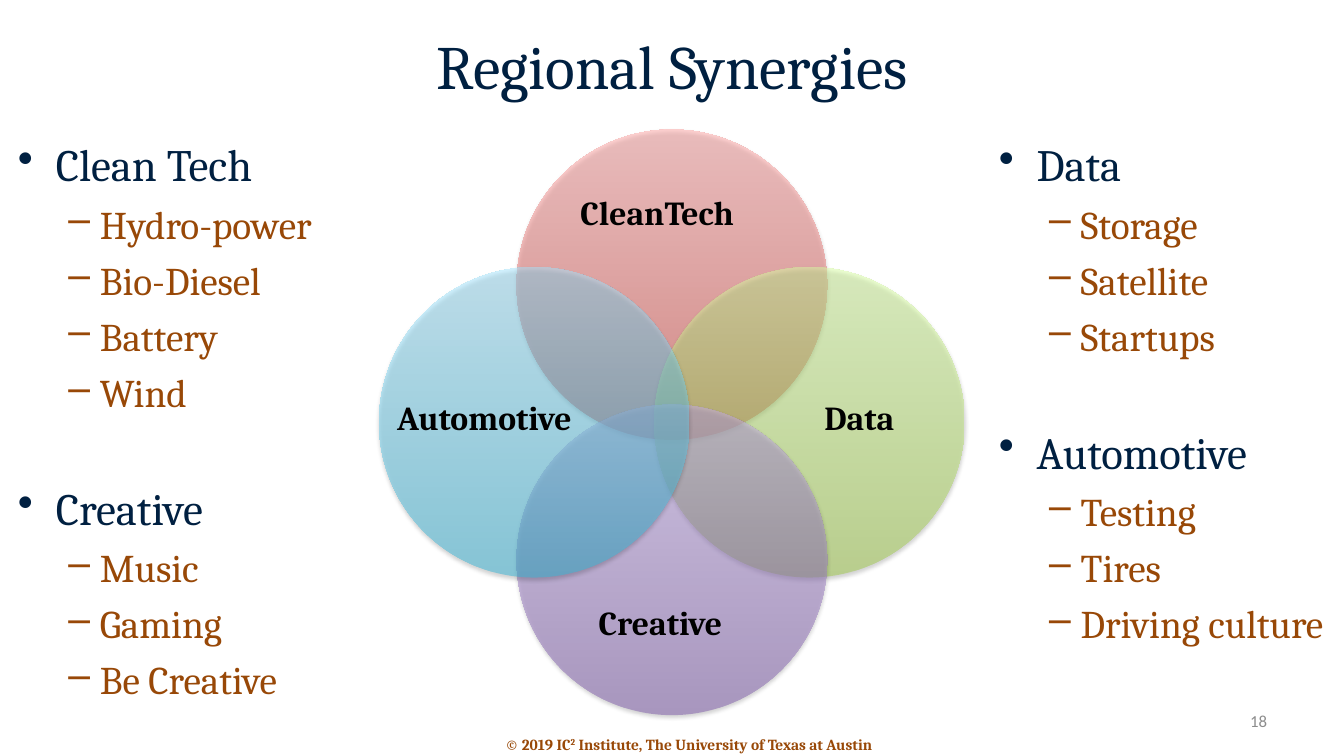
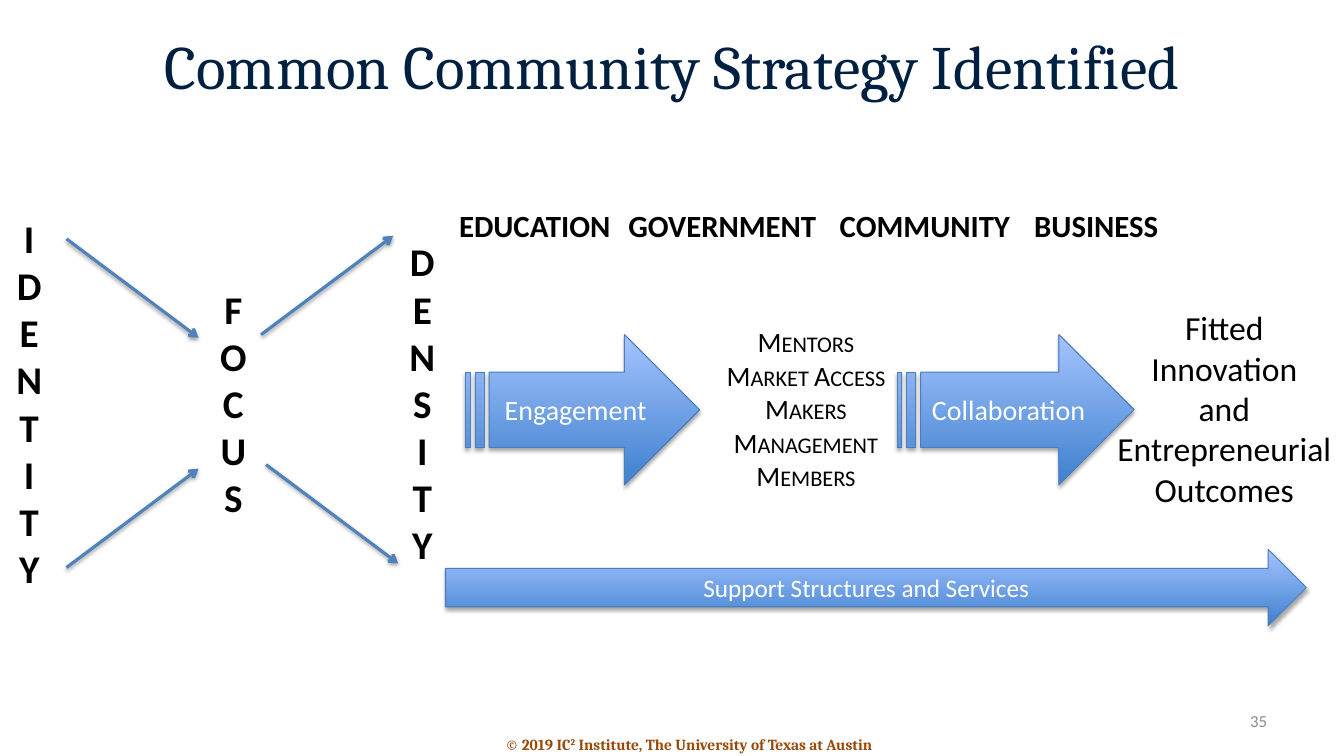
from dataclasses import dataclass
from typing import NamedTuple, Optional

from lxml import etree
from pptx import Presentation
from pptx.dml.color import RGBColor
from pptx.enum.shapes import MSO_CONNECTOR, MSO_SHAPE
from pptx.enum.text import MSO_ANCHOR, MSO_AUTO_SIZE, PP_ALIGN
from pptx.oxml.ns import qn
from pptx.util import Emu, Inches, Pt

LEFT, CENTER, RIGHT = PP_ALIGN.LEFT, PP_ALIGN.CENTER, PP_ALIGN.RIGHT
TOP, MIDDLE = MSO_ANCHOR.TOP, MSO_ANCHOR.MIDDLE
GROW = MSO_AUTO_SIZE.SHAPE_TO_FIT_TEXT
STRAIGHT = MSO_CONNECTOR.STRAIGHT
ELLIPSE = MSO_SHAPE.OVAL
STRIPED_ARROW, RIGHT_ARROW = MSO_SHAPE.STRIPED_RIGHT_ARROW, MSO_SHAPE.RIGHT_ARROW

NAVY = RGBColor(0x00, 0x20, 0x41)
RUST = RGBColor(0x98, 0x48, 0x07)
GREY = RGBColor(0x8C, 0x8C, 0x8C)
BLACK = RGBColor(0x00, 0x00, 0x00)
WHITE = RGBColor(0xFF, 0xFF, 0xFF)
BLUE = RGBColor(0x4F, 0x81, 0xBD)
ARROW_EDGE = RGBColor(0x4B, 0x7E, 0xBC)
ARROW_DARK = RGBColor(0x3F, 0x80, 0xCE)
ARROW_LIGHT = RGBColor(0xA4, 0xC4, 0xFF)
RED_DARK, RED_LIGHT = RGBColor(0xD1, 0x40, 0x3C), RGBColor(0xFF, 0xA6, 0xA5)
GREEN_DARK, GREEN_LIGHT = RGBColor(0xA0, 0xCA, 0x4A), RGBColor(0xDA, 0xFF, 0xA5)
PURPLE_DARK, PURPLE_LIGHT = RGBColor(0x7F, 0x5B, 0xAB), RGBColor(0xC8, 0xB0, 0xED)
AQUA_DARK, AQUA_LIGHT = RGBColor(0x39, 0xB7, 0xD8), RGBColor(0xA7, 0xE6, 0xFF)

CELL = Inches(0.1)
COLUMNS, ROWS = 133.33, 75


class Box(NamedTuple):
    left: float
    top: float
    width: float
    height: float


@dataclass(frozen=True)
class TextStyle:
    size: float
    color: RGBColor = BLACK
    font: str = "Calibri"
    bold: bool = False
    align: PP_ALIGN = CENTER
    small_caps: bool = False


@dataclass(frozen=True)
class BulletStyle:
    character: str
    margin: float
    hanging: float
    level: int
    text: TextStyle


@dataclass(frozen=True)
class Topic:
    heading: str
    items: tuple[str, ...]


@dataclass(frozen=True)
class Circle:
    label: str
    across: int
    down: int
    dark: RGBColor
    light: RGBColor
    label_box: Box


@dataclass(frozen=True)
class BlockArrow:
    text: str
    kind: MSO_SHAPE
    box: Box
    size: float


@dataclass(frozen=True)
class TextBlock:
    text: str
    box: Box
    style: TextStyle
    wrap: bool = False


TITLE = TextStyle(44, NAVY, "Cambria")
FOOTER = TextStyle(11, RUST, "Cambria", bold=True)
NUMBER = TextStyle(12, GREY, align=RIGHT)
CIRCLE_LABEL = TextStyle(24, BLACK, "Cambria", bold=True, align=LEFT)
LETTERS = TextStyle(28, bold=True)
PILLAR = TextStyle(22, bold=True)
ROLES = TextStyle(20, small_caps=True)
OUTCOMES = TextStyle(24)
HEADING = BulletStyle("•", 3.75, 3.75, 0, TextStyle(32, NAVY, "Cambria", align=LEFT))
ITEM = BulletStyle("–", 8.13, 3.13, 1, TextStyle(28, RUST, "Cambria", align=LEFT))
ITEM_GAP, TOPIC_GAP = Pt(6.5), Pt(46.5)

TITLE_BOX = Box(6.7, 0.2, 120, 12.5)
FOOTER_BOX = Box(37.8, 72.4, 61.1, 2.9)
NUMBER_BOX = Box(95.6, 69.5, 31.1, 4)
FOOTER_PARTS = (("© 2019 IC", 0), ("2", 30000), (" Institute, The University of Texas at Austin", 0))

TOPIC_LISTS = (
    (Box(0.8, 13.1, 39.3, 58.6), (
        Topic("Clean Tech", ("Hydro-power", "Bio-Diesel", "Battery", "Wind")),
        Topic("Creative", ("Music", "Gaming", "Be Creative")))),
    (Box(98.1, 13.1, 35.8, 58.6), (
        Topic("Data", ("Storage", "Satellite", "Startups")),
        Topic("Automotive", ("Testing", "Tires", "Driving culture")))),
)
DIAMETER, SPREAD = 30.8, 13.65
VENN_LEFT, VENN_TOP = 51.25, 26.5
CIRCLES = (
    Circle("CleanTech", 0, -1, RED_DARK, RED_LIGHT, Box(56.6, 18.5, 20.1, 5)),
    Circle("Data", 1, 0, GREEN_DARK, GREEN_LIGHT, Box(80.8, 38.9, 10.2, 5)),
    Circle("Creative", 0, 1, PURPLE_DARK, PURPLE_LIGHT, Box(58.4, 59.2, 16.5, 5)),
    Circle("Automotive", -1, 0, AQUA_DARK, AQUA_LIGHT, Box(38.4, 38.9, 22.2, 5)),
)

TEXT_BLOCKS = (
    TextBlock("\n".join("IDENTITY"), Box(0.6, 20.8, 4.6, 38.7), LETTERS),
    TextBlock("\n".join("FOCUS"), Box(20.8, 27.8, 4.7, 24.6), LETTERS),
    TextBlock("\n".join("DENSITY"), Box(39.6, 23.1, 4.6, 34), LETTERS),
    TextBlock("Mentors\nMarket Access\nMakers\nManagement\nMembers", Box(70.9, 31.7, 18.1, 17.8), ROLES),
    TextBlock("Fitted\nInnovation\nand\nEntrepreneurial\nOutcomes", Box(109.7, 30, 23.5, 21.2), OUTCOMES),
    TextBlock("EDUCATION", Box(44.2, 20, 17.7, 4.7), PILLAR, True),
    TextBlock("GOVERNMENT", Box(60.7, 20, 21.9, 4.7), PILLAR, True),
    TextBlock("COMMUNITY", Box(81.5, 20, 20.5, 4.7), PILLAR, True),
    TextBlock("BUSINESS", Box(100.8, 20, 15.9, 4.7), PILLAR, True),
)
THIN_RUN, THIN_RISE = 13.1, 9.8
THIN_ARROWS = ((6.6, 23.7, 1), (6.6, 56.3, -1), (26.4, 46.1, 1), (25.9, 33.2, -1))
BLOCK_ARROWS = (
    BlockArrow("Engagement", STRIPED_ARROW, Box(46.2, 33.2, 23.2, 14.9), 20),
    BlockArrow("Collaboration", STRIPED_ARROW, Box(89, 33.2, 23.5, 14.9), 20),
    BlockArrow("Support Structures and Services", RIGHT_ARROW, Box(44.2, 54.5, 85.4, 7.6), 18),
)


def cells(count: float) -> Emu:
    return Emu(round(count * CELL))


def place(box: Box) -> tuple[Emu, ...]:
    return tuple(cells(value) for value in box)


def format_paragraph(paragraph, style: TextStyle) -> None:
    paragraph.alignment = style.align
    for run in paragraph.runs:
        run.font.size = Pt(style.size)
        run.font.name = style.font
        run.font.bold = style.bold
        run.font.color.rgb = style.color
        if style.small_caps:
            run._r.get_or_add_rPr().set("cap", "small")


def write_text(text_frame, text: str, style: TextStyle) -> None:
    text_frame.text = text
    for paragraph in text_frame.paragraphs:
        format_paragraph(paragraph, style)


def add_text(slide, box: Box, text: str, style: TextStyle, wrap: bool = True, anchor: MSO_ANCHOR = TOP):
    text_frame = slide.shapes.add_textbox(*place(box)).text_frame
    text_frame.word_wrap = wrap
    text_frame.vertical_anchor = anchor
    if anchor == TOP:
        text_frame.auto_size = GROW
    write_text(text_frame, text, style)


def add_shadow(shape, opacity: int, distance: float) -> None:
    effects = shape._element.spPr.get_or_add_effectLst()
    shadow = etree.SubElement(effects, qn("a:outerShdw"), blurRad=str(Pt(3.1)), dist=str(Pt(distance)),
                              dir="5400000", rotWithShape="0")
    color = etree.SubElement(shadow, qn("a:srgbClr"), val=str(BLACK))
    etree.SubElement(color, qn("a:alpha"), val=str(opacity * 1000))


def add_glossy_shape(slide, kind: MSO_SHAPE, box: Box, dark: RGBColor, light: RGBColor,
                     edge: Optional[RGBColor] = None, opacity: int = 100):
    shape = slide.shapes.add_shape(kind, *place(box))
    shape.fill.gradient()
    shape.fill.gradient_angle = 90
    for stop, color in zip(shape.fill.gradient_stops, (dark, light)):
        stop.color.rgb = color
    if opacity < 100:
        for color in shape._element.spPr.iter(qn("a:srgbClr")):
            etree.SubElement(color, qn("a:alpha"), val=str(opacity * 1000))
    if edge is None:
        shape.line.fill.background()
    else:
        shape.line.color.rgb = edge
        shape.line.width = Pt(0.75)
    shape.shadow.inherit = False
    add_shadow(shape, 35, 1.8)
    return shape


def add_thin_arrow(slide, left: float, top: float, direction: int) -> None:
    connector = slide.shapes.add_connector(
        STRAIGHT, cells(left), cells(top), cells(left + THIN_RUN), cells(top + direction * THIN_RISE))
    connector.line.color.rgb = BLUE
    connector.line.width = Pt(2.25)
    etree.SubElement(connector.line._get_or_add_ln(), qn("a:tailEnd"), type="arrow")
    add_shadow(connector, 38, 1.6)


def add_block_arrow(slide, arrow: BlockArrow) -> None:
    shape = add_glossy_shape(slide, arrow.kind, arrow.box, ARROW_DARK, ARROW_LIGHT, ARROW_EDGE)
    shape.text_frame.word_wrap = True
    shape.text_frame.vertical_anchor = MIDDLE
    write_text(shape.text_frame, arrow.text, TextStyle(arrow.size, WHITE))


def add_topic_list(slide, box: Box, topics: tuple[Topic, ...]) -> None:
    text_frame = slide.shapes.add_textbox(*place(box)).text_frame
    text_frame.word_wrap = True
    lines = []
    for topic in topics:
        lines.append((topic.heading, HEADING, TOPIC_GAP))
        lines.extend((item, ITEM, ITEM_GAP) for item in topic.items)
    text_frame.text = "\n".join(text for text, _, _ in lines)
    for index, (paragraph, (_, bullet, gap)) in enumerate(zip(text_frame.paragraphs, lines)):
        properties = paragraph._p.get_or_add_pPr()
        properties.set("marL", str(cells(bullet.margin)))
        properties.set("indent", str(-cells(bullet.hanging)))
        etree.SubElement(properties, qn("a:buChar"), char=bullet.character)
        paragraph.level = bullet.level
        if index:
            paragraph.space_before = gap
        format_paragraph(paragraph, bullet.text)


def add_footer(slide) -> None:
    text_frame = slide.shapes.add_textbox(*place(FOOTER_BOX)).text_frame
    text_frame.word_wrap = True
    paragraph = text_frame.paragraphs[0]
    for text, baseline in FOOTER_PARTS:
        run = paragraph.add_run()
        run.text = text
        if baseline:
            run._r.get_or_add_rPr().set("baseline", str(baseline))
    format_paragraph(paragraph, FOOTER)


def start_slide(presentation, title: str, number: int):
    slide = presentation.slides.add_slide(presentation.slide_layouts[5])
    shape = slide.shapes.title
    shape.left, shape.top, shape.width, shape.height = place(TITLE_BOX)
    shape.text_frame.vertical_anchor = MIDDLE
    write_text(shape.text_frame, title, TITLE)
    add_footer(slide)
    add_text(slide, NUMBER_BOX, str(number), NUMBER, anchor=MIDDLE)
    return slide


def build_synergies(presentation) -> None:
    slide = start_slide(presentation, "Regional Synergies", 18)
    for box, topics in TOPIC_LISTS:
        add_topic_list(slide, box, topics)
    for circle in CIRCLES:
        box = Box(VENN_LEFT + circle.across * SPREAD, VENN_TOP + circle.down * SPREAD, DIAMETER, DIAMETER)
        add_glossy_shape(slide, ELLIPSE, box, circle.dark, circle.light, opacity=50)
    for circle in CIRCLES:
        add_text(slide, circle.label_box, circle.label, CIRCLE_LABEL, wrap=False)


def build_strategy(presentation) -> None:
    slide = start_slide(presentation, "Common Community Strategy Identified", 35)
    for block in TEXT_BLOCKS:
        add_text(slide, block.box, block.text, block.style, block.wrap)
    for left, top, direction in THIN_ARROWS:
        add_thin_arrow(slide, left, top, direction)
    for arrow in BLOCK_ARROWS:
        add_block_arrow(slide, arrow)


def main() -> None:
    presentation = Presentation()
    presentation.slide_width, presentation.slide_height = cells(COLUMNS), cells(ROWS)
    build_synergies(presentation)
    build_strategy(presentation)
    presentation.save("out.pptx")


if __name__ == "__main__":
    main()
